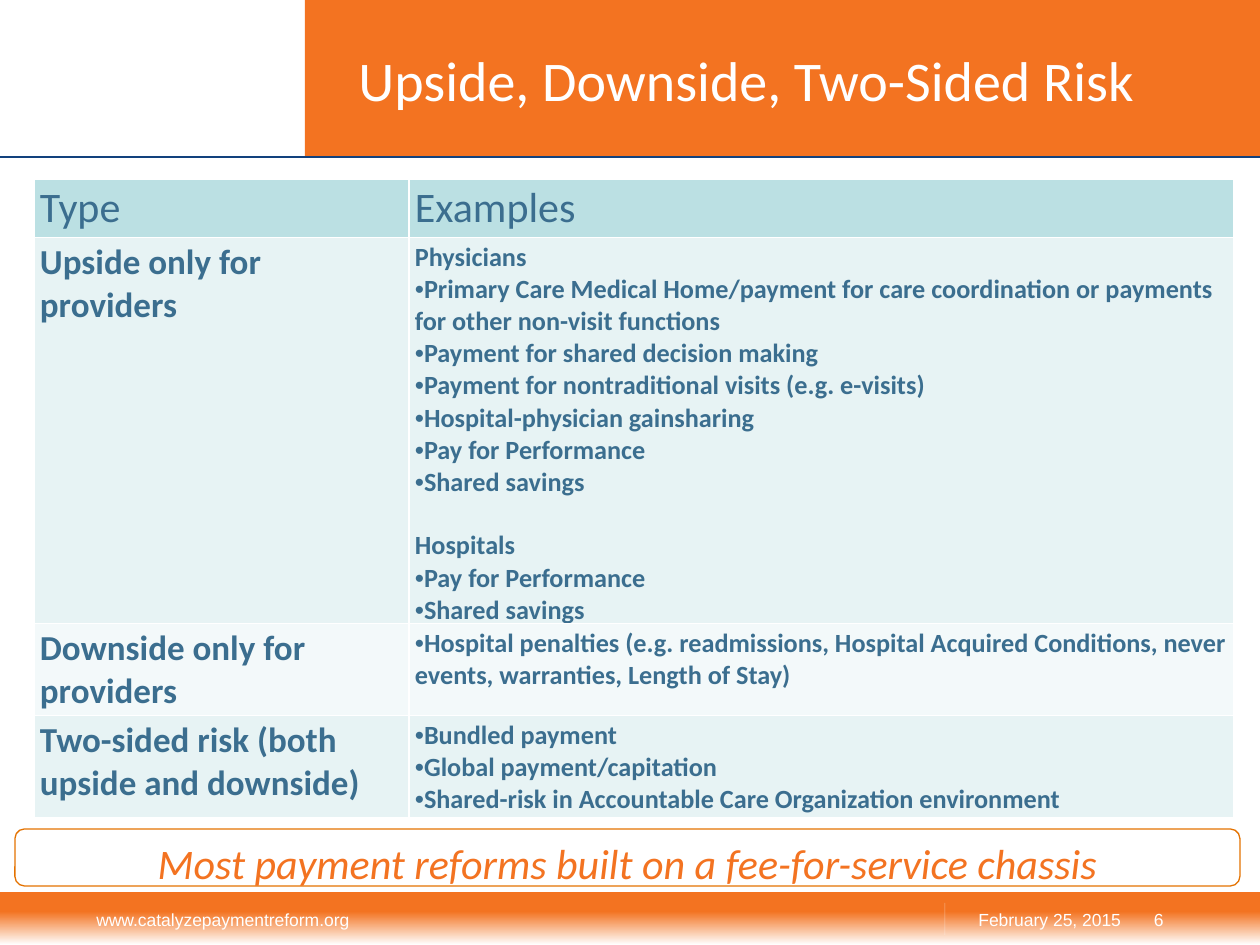
from lxml.etree import SubElement
from pptx import Presentation
from pptx.dml.color import RGBColor
from pptx.enum.shapes import MSO_CONNECTOR, MSO_SHAPE
from pptx.enum.text import MSO_ANCHOR, PP_ALIGN
from pptx.oxml.ns import qn
from pptx.util import Emu, Pt

PX = 914400 // 126
WIDTH, HEIGHT = 1260, 945
WHITE = RGBColor(0xFF, 0xFF, 0xFF)
ORANGE = RGBColor(0xF3, 0x73, 0x21)
CALLOUT_LINE = RGBColor(0xE4, 0x72, 0x00)
NAVY = RGBColor(0x12, 0x41, 0x7D)
TABLE_TEXT = RGBColor(0x3B, 0x6E, 0x8F)
HEADER_FILL = RGBColor(0xBB, 0xE0, 0xE3)
BAND_FILLS = (RGBColor(0xF3, 0xF9, 0xFA), RGBColor(0xE7, 0xF3, 0xF4))

TITLE = "Upside, Downside, Two-Sided Risk"
CALLOUT = "Most payment reforms built on a fee-for-service chassis"
FOOTERS = [
    ("6", (1071, 903, 105, 42), PP_ALIGN.RIGHT),
    ("www.catalyzepaymentreform.org", (84, 903, 935, 42), PP_ALIGN.LEFT),
    ("February 25, 2015", (966, 903, 262, 42), PP_ALIGN.LEFT),
]
HEADERS = ("Type", "Examples")
RISK_TYPES = [
    ("Upside only for providers", [
        ("Physicians", [
            "Primary Care Medical Home/payment for care coordination or payments for other non-visit functions",
            "Payment for shared decision making",
            "Payment for nontraditional visits (e.g. e-visits)",
            "Hospital-physician gainsharing",
            "Pay for Performance",
            "Shared savings",
        ]),
        ("Hospitals", ["Pay for Performance", "Shared savings"]),
    ]),
    ("Downside only for providers", [
        (None, ["Hospital penalties (e.g. readmissions, Hospital Acquired Conditions, "
                "never events, warranties, Length of Stay)"]),
    ]),
    ("Two-sided risk (both upside and downside)", [
        (None, [
            "Bundled payment",
            "Global payment/capitation",
            "Shared-risk in Accountable Care Organization environment",
        ]),
    ]),
]
TABLE_LEFT, TABLE_TOP = 34, 179
COLUMN_WIDTHS = (375, 825)
ROW_HEIGHTS = (47, 344, 69, 100)


def px(*lengths):
    return [Emu(length * PX) for length in lengths]


def style(paragraph, size, color, name="Calibri", bold=False, italic=False):
    font = paragraph.font
    font.name, font.size, font.bold, font.italic = name, Pt(size), bold, italic
    font.color.rgb = color


def add_text(slide, text, box, size, name, align=PP_ALIGN.LEFT, anchor=MSO_ANCHOR.TOP):
    frame = slide.shapes.add_textbox(*px(*box)).text_frame
    frame.word_wrap = True
    frame.vertical_anchor = anchor
    paragraph = frame.paragraphs[0]
    paragraph.text, paragraph.alignment = text, align
    style(paragraph, size, WHITE, name)


def add_panel(slide, kind, box):
    shape = slide.shapes.add_shape(kind, *px(*box))
    shape.shadow.inherit = False
    shape.line.fill.background()
    return shape


def add_line(slide, ends, color, width, opacity=None):
    line = slide.shapes.add_connector(MSO_CONNECTOR.STRAIGHT, *px(*ends))
    line.line.color.rgb, line.line.width = color, Pt(width)
    properties = line._element.spPr
    SubElement(properties, qn("a:effectLst"))
    if opacity:
        solid = properties.find(".//" + qn("a:srgbClr"))
        SubElement(solid, qn("a:alpha"), val=str(opacity * 1000))


def format_cell(cell, fill):
    cell.margin_left = cell.margin_right = Emu(6 * PX)
    cell.margin_top = cell.margin_bottom = Emu(4 * PX)
    properties = cell._tc.get_or_add_tcPr()
    for side in ("lnL", "lnR", "lnT", "lnB"):
        border = SubElement(properties, qn("a:" + side), w=str(Pt(1)))
        SubElement(SubElement(border, qn("a:solidFill")), qn("a:srgbClr"), val=str(WHITE))
    cell.fill.solid()
    cell.fill.fore_color.rgb = fill


def fill_examples(cell, groups):
    entries = []
    for index, (heading, items) in enumerate(groups):
        if heading:
            entries.append((heading, False, 18 if index else 0))
        entries += [(item, True, 0) for item in items]
    frame = cell.text_frame
    for index, (text, bulleted, gap) in enumerate(entries):
        paragraph = frame.add_paragraph() if index else frame.paragraphs[0]
        paragraph.text = text
        if gap:
            paragraph.space_before = Pt(gap)
        if bulleted:
            properties = paragraph._p.get_or_add_pPr()
            properties.set("marL", "0")
            properties.set("indent", "0")
            SubElement(properties, qn("a:buFont"), typeface="Arial")
            SubElement(properties, qn("a:buChar"), char="•")
        style(paragraph, 15, TABLE_TEXT, bold=True)


def add_risk_table(slide):
    box = (TABLE_LEFT, TABLE_TOP, sum(COLUMN_WIDTHS), sum(ROW_HEIGHTS))
    table = slide.shapes.add_table(len(ROW_HEIGHTS), len(COLUMN_WIDTHS), *px(*box)).table
    for column, width in zip(table.columns, px(*COLUMN_WIDTHS)):
        column.width = width
    for row, height in zip(table.rows, px(*ROW_HEIGHTS)):
        row.height = height
    for index, header in enumerate(HEADERS):
        cell = table.cell(0, index)
        format_cell(cell, HEADER_FILL)
        cell.text = header
        style(cell.text_frame.paragraphs[0], 24, TABLE_TEXT)
    for index, (risk_type, groups) in enumerate(RISK_TYPES, 1):
        type_cell, example_cell = table.cell(index, 0), table.cell(index, 1)
        for cell in (type_cell, example_cell):
            format_cell(cell, BAND_FILLS[index % 2])
        type_cell.text = risk_type
        style(type_cell.text_frame.paragraphs[0], 20, TABLE_TEXT, bold=True)
        fill_examples(example_cell, groups)


def add_callout(slide):
    callout = add_panel(slide, MSO_SHAPE.ROUNDED_RECTANGLE, (15, 829, 1225, 57))
    callout.fill.solid()
    callout.fill.fore_color.rgb = WHITE
    callout.line.color.rgb, callout.line.width = CALLOUT_LINE, Pt(0.75)
    frame = callout.text_frame
    frame.word_wrap = True
    frame.vertical_anchor = MSO_ANCHOR.TOP
    paragraph = frame.paragraphs[0]
    paragraph.text, paragraph.alignment = CALLOUT, PP_ALIGN.CENTER
    style(paragraph, 24, ORANGE, italic=True)


def main():
    presentation = Presentation()
    presentation.slide_width, presentation.slide_height = px(WIDTH, HEIGHT)
    slide = presentation.slides.add_slide(presentation.slide_layouts[6])

    banner = add_panel(slide, MSO_SHAPE.RECTANGLE, (305, 0, 955, 157))
    banner.fill.solid()
    banner.fill.fore_color.rgb = ORANGE
    footer_band = add_panel(slide, MSO_SHAPE.RECTANGLE, (0, 892, WIDTH, 53))
    footer_band.fill.gradient()
    footer_band.fill.gradient_angle = 270
    for stop, position, color in zip(footer_band.fill.gradient_stops, (0.37, 1), (ORANGE, WHITE)):
        stop.position, stop.color.rgb = position, color
    add_line(slide, (0, 157, WIDTH, 157), NAVY, 1)
    add_line(slide, (945, 903, 945, 935), WHITE, 0.25, opacity=50)

    add_text(slide, TITLE, (346, 53, 861, 53), 32, "Calibri", anchor=MSO_ANCHOR.MIDDLE)
    for text, box, align in FOOTERS:
        add_text(slide, text, box, 10, "Arial", align)
    add_risk_table(slide)
    add_callout(slide)
    presentation.save("out.pptx")


if __name__ == "__main__":
    main()
